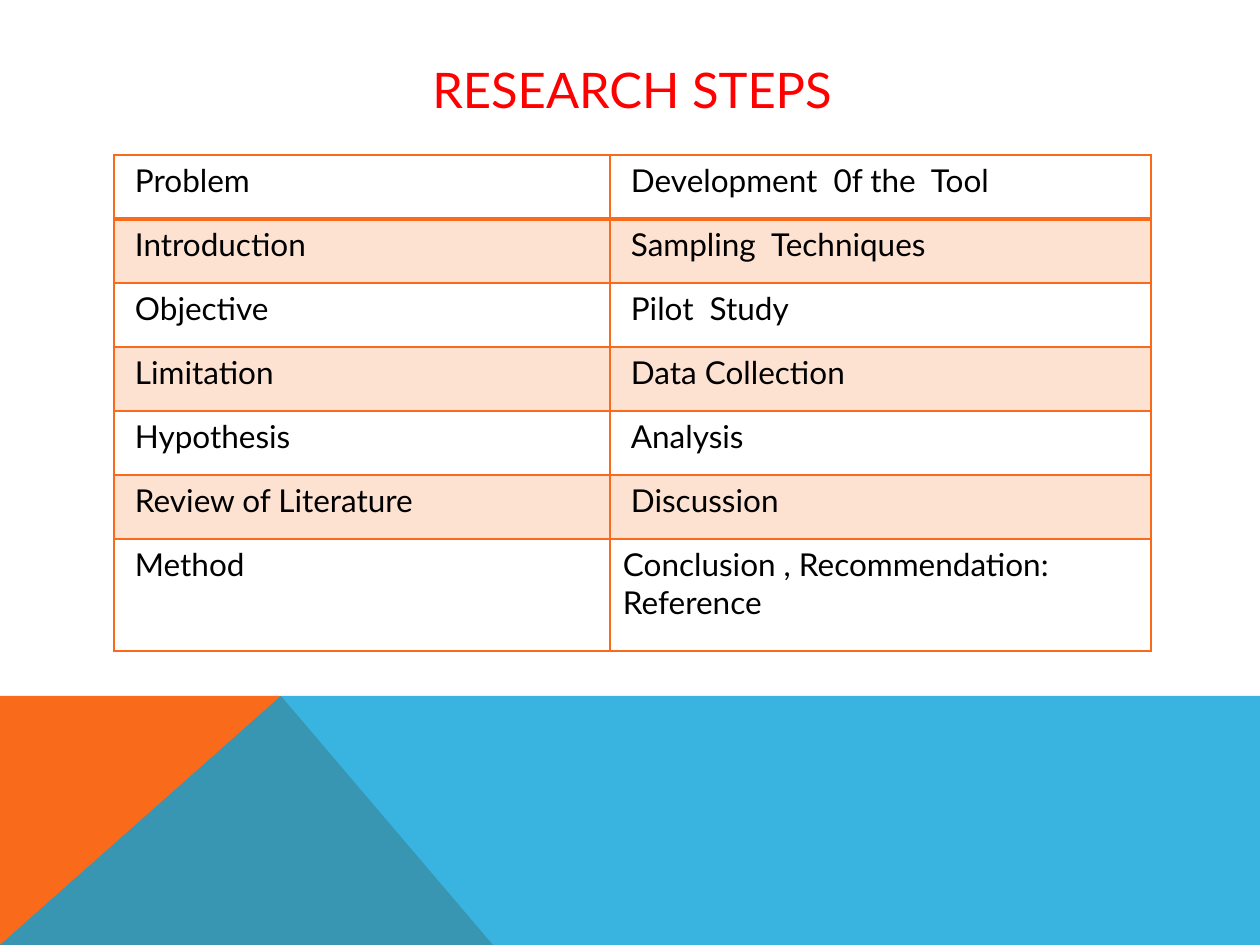
import dataclasses

import lxml.etree
import pptx
import pptx.dml.color
import pptx.enum.text
import pptx.oxml.ns
import pptx.util

EMU_PER_PX = 914400 / 126
PAGE_WIDTH, PAGE_HEIGHT = 1260, 945
ROWS = [
    ("Problem", "Development  0f the  Tool"),
    ("Introduction", "Sampling  Techniques"),
    ("Objective", "Pilot  Study"),
    ("Limitation", "Data Collection"),
    ("Hypothesis", "Analysis"),
    ("Review of Literature", "Discussion"),
    ("Method", "Conclusion , Recommendation: Reference"),
]


@dataclasses.dataclass(frozen=True)
class Theme:
    font: str = "Lato"
    title_size: int = 28
    body_size: int = 18
    title: str = "FF0000"
    text: str = "000000"
    orange: str = "F96A1B"
    blue: str = "08A1D9"
    band_opacity: int = 20
    blue_opacity: int = 80


THEME = Theme()


def px(length):
    return pptx.util.Emu(round(length * EMU_PER_PX))


def add_xml(parent, tag, **attributes):
    return lxml.etree.SubElement(parent, pptx.oxml.ns.qn(tag), attributes)


def fill_solid(fill, color, holder, opacity=100):
    """Fill with a colour; holder is the XML element that carries the fill."""
    fill.solid()
    fill.fore_color.rgb = pptx.dml.color.RGBColor.from_string(color)
    if opacity < 100:
        color_node = holder.find(pptx.oxml.ns.qn("a:solidFill"))[0]
        add_xml(color_node, "a:alpha", val=str(opacity * 1000))


def style_font(para, size, color):
    para.font.name = THEME.font
    para.font.size = pptx.util.Pt(size)
    para.font.color.rgb = pptx.dml.color.RGBColor.from_string(color)


def add_polygon(page, points, color, opacity=100):
    builder = page.shapes.build_freeform(*points[0], scale=EMU_PER_PX)
    builder.add_line_segments(points[1:], close=True)
    shape = builder.convert_to_shape()
    shape.shadow.inherit = False
    shape.line.fill.background()
    fill_solid(shape.fill, color, shape.element.spPr, opacity)


def add_footer(page, left, top, width, height):
    right, bottom = left + width, top + height
    peak = (left + 281, top)
    add_polygon(page, [(left, bottom), (left, top), peak, (left + 493, bottom)],
                THEME.orange)
    add_polygon(page, [(left, bottom), peak, (right, top), (right, bottom)],
                THEME.blue, THEME.blue_opacity)


def add_title(page, text, left, top, width, height):
    box = page.shapes.add_textbox(px(left), px(top), px(width), px(height))
    frame = box.text_frame
    frame.word_wrap = True
    frame.vertical_anchor = pptx.enum.text.MSO_ANCHOR.MIDDLE
    para = frame.paragraphs[0]
    para.text = text
    para.alignment = pptx.enum.text.PP_ALIGN.CENTER
    style_font(para, THEME.title_size, THEME.title)


def add_border(properties, side, width):
    line = add_xml(properties, f"a:ln{side}", w=str(pptx.util.Pt(width)))
    add_xml(add_xml(line, "a:solidFill"), "a:srgbClr", val=THEME.orange)


def fill_cell(cell, text, row, is_last):
    properties = cell._tc.get_or_add_tcPr()
    for side in "LRTB":
        is_header_rule = (row, side) in ((0, "B"), (1, "T"))
        add_border(properties, side, 2 if is_header_rule else 1)
    if row % 2:
        fill_solid(cell.fill, THEME.orange, properties, THEME.band_opacity)
    else:
        cell.fill.background()
    cell.margin_left = px(13 if is_last else 21)
    para = cell.text_frame.paragraphs[0]
    para.text = text
    para.alignment = pptx.enum.text.PP_ALIGN.LEFT
    style_font(para, THEME.body_size, THEME.text)


def add_steps_table(page, left, top, width, height):
    column_widths = [496, width - 496]
    row_height = 64
    last_height = height - row_height * (len(ROWS) - 1)
    table = page.shapes.add_table(len(ROWS), len(column_widths), px(left), px(top),
                                  px(width), px(height)).table
    table.first_row = table.horz_banding = False
    for column, column_width in zip(table.columns, column_widths):
        column.width = px(column_width)
    last = (len(ROWS) - 1, len(column_widths) - 1)
    for row, texts in enumerate(ROWS):
        table.rows[row].height = px(last_height if row == last[0] else row_height)
        for column, text in enumerate(texts):
            fill_cell(table.cell(row, column), text, row, (row, column) == last)


def main():
    deck = pptx.Presentation()
    deck.slide_width, deck.slide_height = px(PAGE_WIDTH), px(PAGE_HEIGHT)
    page = deck.slides.add_slide(deck.slide_layouts[6])
    add_footer(page, 0, 696, PAGE_WIDTH, PAGE_HEIGHT - 696)
    add_title(page, "RESEARCH STEPS", 114, 51, 1036, 76)
    add_steps_table(page, 114, 155, 1037, 496)
    deck.save("out.pptx")


if __name__ == "__main__":
    main()
